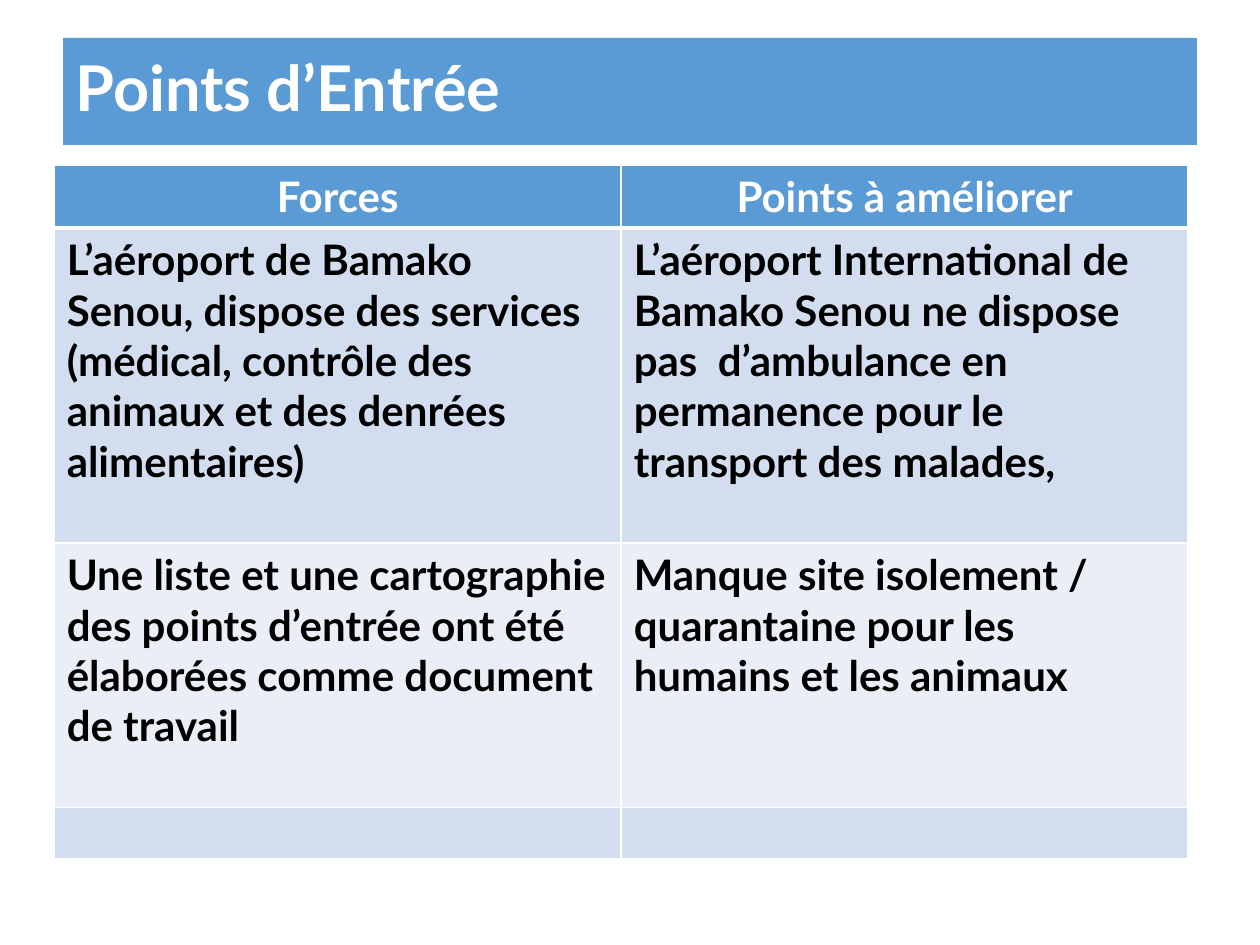
from lxml.etree import SubElement
from pptx import Presentation
from pptx.dml.color import RGBColor
from pptx.enum.text import MSO_ANCHOR, MSO_AUTO_SIZE, PP_ALIGN
from pptx.oxml.ns import qn
from pptx.util import Inches, Pt

FONT = "Lato"
BLUE, WHITE, BLACK = "5B9BD5", "FFFFFF", "000000"
BANDS = ("D2DEEF", "EAEFF7")
ROW_HEIGHTS = (0.49, 2.5, 2.1, 0.4)
ROWS = (
    ("Forces", "Points à améliorer"),
    (
        "L’aéroport de Bamako Senou, dispose des services (médical, contrôle "
        "des animaux et des denrées alimentaires)",
        "L’aéroport International de Bamako Senou ne dispose pas  d’ambulance "
        "en permanence pour le transport des malades,",
    ),
    (
        "Une liste et une cartographie des points d’entrée ont été élaborées "
        "comme document de travail",
        "Manque site isolement / quarantaine pour les humains et les animaux",
    ),
    ("", ""),
)


def color(hex_value):
    return RGBColor.from_string(hex_value)


def fill_solid(target, hex_value):
    target.fill.solid()
    target.fill.fore_color.rgb = color(hex_value)


def add_run(paragraph, text, size, hex_value, align=PP_ALIGN.LEFT):
    paragraph.alignment = align
    run = paragraph.add_run()
    run.text = text
    run.font.name = FONT
    run.font.size = Pt(size)
    run.font.bold = True
    run.font.color.rgb = color(hex_value)


def set_borders(cell, top, bottom):
    """Draw white cell borders; must precede the fill in the cell's XML."""
    properties = cell._tc.get_or_add_tcPr()
    for side, width in (("L", 1), ("R", 1), ("T", top), ("B", bottom)):
        line = SubElement(properties, qn(f"a:ln{side}"), w=str(Pt(width)))
        SubElement(SubElement(line, qn("a:solidFill")), qn("a:srgbClr"), val=WHITE)


def place_title(slide, left, top, width, height):
    title = slide.shapes.title
    title.left, title.top = Inches(left), Inches(top)
    title.width, title.height = Inches(width), Inches(height)
    fill_solid(title, BLUE)
    frame = title.text_frame
    frame.auto_size = MSO_AUTO_SIZE.NONE
    frame.word_wrap = True
    frame.vertical_anchor = MSO_ANCHOR.MIDDLE
    heading = frame.paragraphs[0]
    heading.line_spacing = 0.9
    add_run(heading, "Points d’Entrée", 36, WHITE)


def place_assessment(slide, left, top, width):
    table = slide.shapes.add_table(
        len(ROWS), len(ROWS[0]), Inches(left), Inches(top),
        Inches(width), Inches(sum(ROW_HEIGHTS)),
    ).table
    for r, (texts, height) in enumerate(zip(ROWS, ROW_HEIGHTS)):
        table.rows[r].height = Inches(height)
        header = r == 0
        for c, text in enumerate(texts):
            cell = table.cell(r, c)
            set_borders(cell, top=3 if r == 1 else 1, bottom=3 if header else 1)
            fill_solid(cell, BLUE if header else BANDS[(r - 1) % 2])
            if text:
                add_run(
                    cell.text_frame.paragraphs[0], text, 24,
                    WHITE if header else BLACK,
                    PP_ALIGN.CENTER if header else PP_ALIGN.LEFT,
                )


def main():
    prs = Presentation()
    prs.slide_width, prs.slide_height = Inches(10), Inches(7.5)
    slide = prs.slides.add_slide(prs.slide_layouts[5])
    place_title(slide, 0.5, 0.3, 9, 0.85)
    place_assessment(slide, 0.43, 1.31, 9)
    prs.save("out.pptx")


if __name__ == "__main__":
    main()
